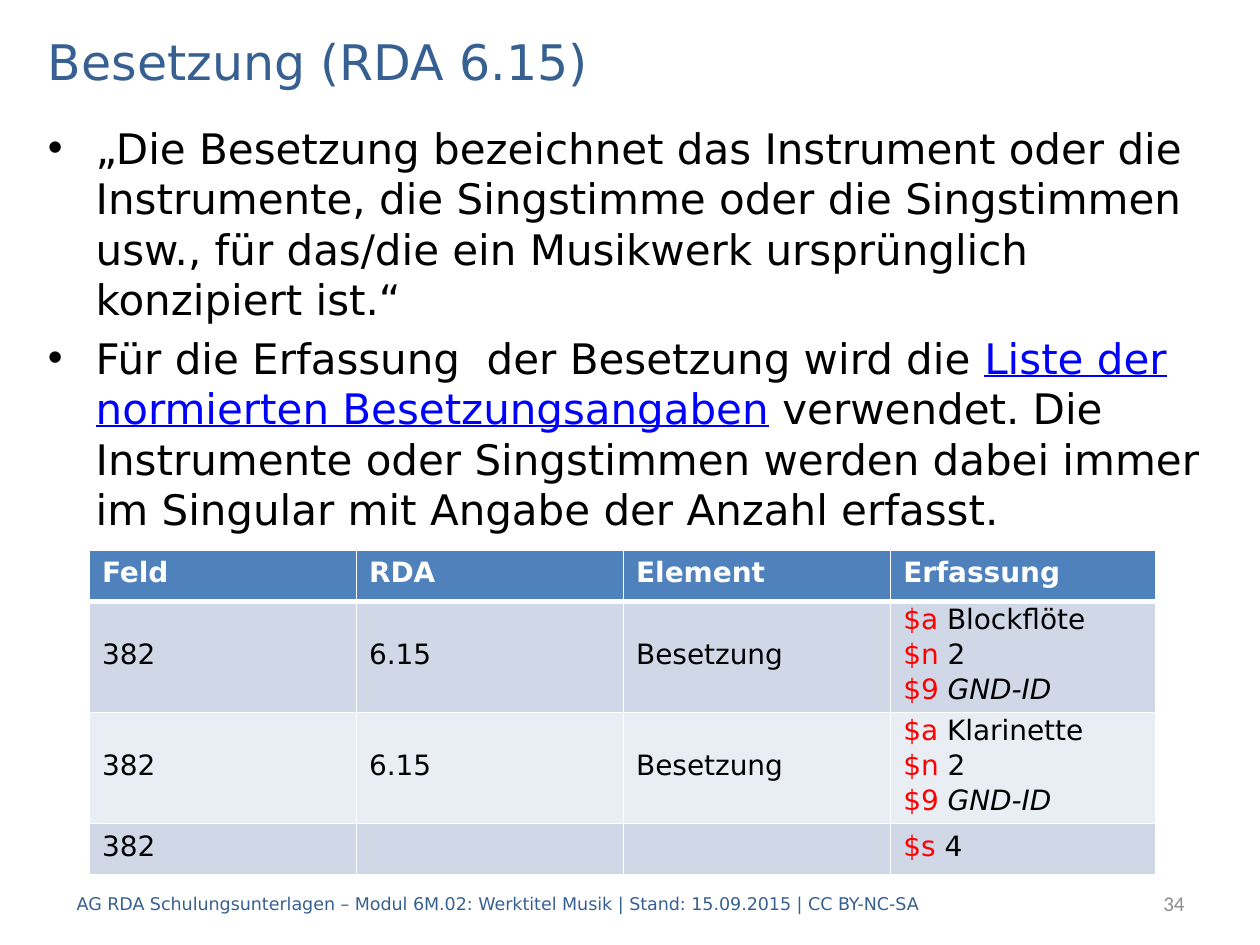
"""Build the slide on the medium of performance (RDA 6.15) with its cataloguing table."""
from lxml import etree
from pptx import Presentation
from pptx.dml.color import RGBColor
from pptx.enum.text import MSO_ANCHOR, MSO_AUTO_SIZE, PP_ALIGN
from pptx.oxml.ns import qn
from pptx.util import Emu, Inches, Pt

LEFT, RIGHT = PP_ALIGN.LEFT, PP_ALIGN.RIGHT
TOP, MIDDLE = MSO_ANCHOR.TOP, MSO_ANCHOR.MIDDLE
NO_AUTOFIT = MSO_AUTO_SIZE.NONE

BLACK = RGBColor(0x00, 0x00, 0x00)
WHITE = RGBColor(0xFF, 0xFF, 0xFF)
RED = RGBColor(0xFF, 0x00, 0x00)
LINK_BLUE = RGBColor(0x00, 0x00, 0xFF)
TITLE_BLUE = RGBColor(0x37, 0x60, 0x92)
NUMBER_GRAY = RGBColor(0x8C, 0x8C, 0x8C)
HEADER_BLUE = RGBColor(0x4F, 0x81, 0xBD)
BANDS = (RGBColor(0xD0, 0xD8, 0xE8), RGBColor(0xE9, 0xED, 0xF4))

SANS = "DejaVu Sans"
COLUMNS, ROWS = 100, 75

TITLE = "Besetzung (RDA 6.15)"
BULLETS = [
    [("„Die Besetzung bezeichnet das Instrument oder die Instrumente, die Singstimme "
      "oder die Singstimmen usw., für das/die ein Musikwerk ursprünglich konzipiert ist.“", {})],
    [("Für die Erfassung  der Besetzung wird die ", {}),
     ("Liste der normierten Besetzungsangaben", {"color": LINK_BLUE, "underline": True}),
     (" verwendet. Die Instrumente oder Singstimmen werden dabei immer im Singular "
      "mit Angabe der Anzahl erfasst.", {})],
]
FOOTER = ("AG RDA Schulungsunterlagen – Modul 6M.02: Werktitel Musik | "
          "Stand: 15.09.2015 | CC BY-NC-SA")
HEADERS = ["Feld", "RDA", "Element", "Erfassung"]


def subfield(code, value, **style):
    """Return the runs of one subfield: red code, then its value."""
    return [(code + " ", {"color": RED}), (value, style)]


def instrument_row(name):
    """Return the table row that records two of one instrument."""
    entry = [subfield("$a", name), subfield("$n", "2"),
             subfield("$9", "GND-ID", italic=True)]
    return [[[(text, {})]] for text in ("382", "6.15", "Besetzung")] + [entry]


RECORDS = [
    instrument_row("Blockflöte"),
    instrument_row("Klarinette"),
    [[[("382", {})]], [], [], [subfield("$s", "4")]],
]


class SlideBuilder:
    """Hold the style and the current slide, placing elements on a 100 by 75 grid."""

    def __init__(self, presentation):
        """Add a title and content slide to the presentation."""
        self.column = presentation.slide_width / COLUMNS
        self.row = presentation.slide_height / ROWS
        self.slide = presentation.slides.add_slide(presentation.slide_layouts[1])

    def box(self, left, top, width, height):
        """Turn grid columns and rows into lengths."""
        return (Emu(round(left * self.column)), Emu(round(top * self.row)),
                Emu(round(width * self.column)), Emu(round(height * self.row)))

    def move(self, shape, area):
        """Move a shape to an area of the grid."""
        shape.left, shape.top, shape.width, shape.height = self.box(*area)

    def frame(self, shape, anchor):
        """Prepare the text frame of a shape."""
        text_frame = shape.text_frame
        text_frame.word_wrap = True
        text_frame.auto_size = NO_AUTOFIT
        text_frame.vertical_anchor = anchor
        return text_frame

    def add_run(self, paragraph, text, size, color=BLACK, font=SANS,
                bold=False, italic=False, underline=False):
        """Add one formatted run."""
        run = paragraph.add_run()
        run.text = text
        run.font.name, run.font.size = font, Pt(size)
        run.font.bold, run.font.italic, run.font.underline = bold, italic, underline
        run.font.color.rgb = color

    def paragraphs(self, text_frame, count):
        """Yield the first paragraph and as many new ones as needed."""
        for index in range(count):
            yield text_frame.add_paragraph() if index else text_frame.paragraphs[0]

    def title(self, text, area):
        """Fill the title placeholder."""
        shape = self.slide.shapes.title
        self.move(shape, area)
        paragraph = self.frame(shape, MIDDLE).paragraphs[0]
        paragraph.alignment = LEFT
        self.add_run(paragraph, text, 28, TITLE_BLUE)

    def bullets(self, items, area):
        """Fill the body placeholder with a bulleted list."""
        shape = self.slide.placeholders[1]
        self.move(shape, area)
        text_frame = self.frame(shape, TOP)
        for paragraph, runs in zip(self.paragraphs(text_frame, len(items)), items):
            paragraph.space_before = Pt(4.8)
            properties = paragraph._p.get_or_add_pPr()
            properties.set("marL", str(Inches(0.38)))
            properties.set("indent", str(-Inches(0.38)))
            etree.SubElement(properties, qn("a:buChar"), char="•")
            for text, style in runs:
                self.add_run(paragraph, text, 24, **style)

    def text(self, text, area, size, color, font=SANS, alignment=LEFT):
        """Add a one-line text box."""
        shape = self.slide.shapes.add_textbox(*self.box(*area))
        paragraph = self.frame(shape, MIDDLE).paragraphs[0]
        paragraph.alignment = alignment
        self.add_run(paragraph, text, size, color, font)

    def paint(self, cell, fill, top=1, bottom=1):
        """Give a cell white borders and a fill."""
        properties = cell._tc.get_or_add_tcPr()
        for side, width in (("L", 1), ("R", 1), ("T", top), ("B", bottom)):
            line = etree.SubElement(properties, qn("a:ln" + side), w=str(Pt(width)))
            solid = etree.SubElement(line, qn("a:solidFill"))
            etree.SubElement(solid, qn("a:srgbClr"), val=str(WHITE))
        cell.fill.solid()
        cell.fill.fore_color.rgb = fill

    def record_cell(self, cell, lines):
        """Fill a body cell with lines of runs."""
        cell.vertical_anchor = MIDDLE
        for index, paragraph in enumerate(self.paragraphs(cell.text_frame, len(lines))):
            paragraph.line_spacing = Pt(8 if index else 16)
            paragraph.space_before = paragraph.space_after = Pt(6)
            for text, style in lines[index]:
                self.add_run(paragraph, text, 16, **style)

    def table(self, headers, records, area, widths, heights):
        """Add a table with a header row and banded records."""
        shape = self.slide.shapes.add_table(len(records) + 1, len(headers), *self.box(*area))
        table = shape.table
        for column, width in zip(table.columns, widths):
            column.width = Emu(round(width * self.column))
        for row, height in zip(table.rows, heights):
            row.height = Emu(round(height * self.row))
        for index, text in enumerate(headers):
            header = table.cell(0, index)
            self.paint(header, HEADER_BLUE, bottom=3)
            self.add_run(header.text_frame.paragraphs[0], text, 16, WHITE, bold=True)
        for row, record in enumerate(records, start=1):
            for column, lines in enumerate(record):
                cell = table.cell(row, column)
                self.paint(cell, BANDS[(row - 1) % 2], top=3 if row == 1 else 1)
                self.record_cell(cell, lines)


def main():
    """Build and save the slide."""
    presentation = Presentation()
    presentation.slide_width, presentation.slide_height = Inches(10), Inches(7.5)
    builder = SlideBuilder(presentation)
    builder.title(TITLE, (2.8, 2, 94.5, 5.6))
    builder.bullets(BULLETS, (2.8, 9.2, 94.5, 59.8))
    builder.text("34", (79.1, 69.7, 15.9, 4), 12, NUMBER_GRAY, "Calibri", RIGHT)
    builder.text(FOOTER, (5.1, 69.7, 83.5, 4), 10, TITLE_BLUE)
    builder.table(HEADERS, RECORDS, (7.1, 43.7, 84.6, 25.7),
                  (21.2, 21.2, 21.2, 21), (4.05, 8.8, 8.8, 4.05))
    presentation.save("out.pptx")


if __name__ == "__main__":
    main()
